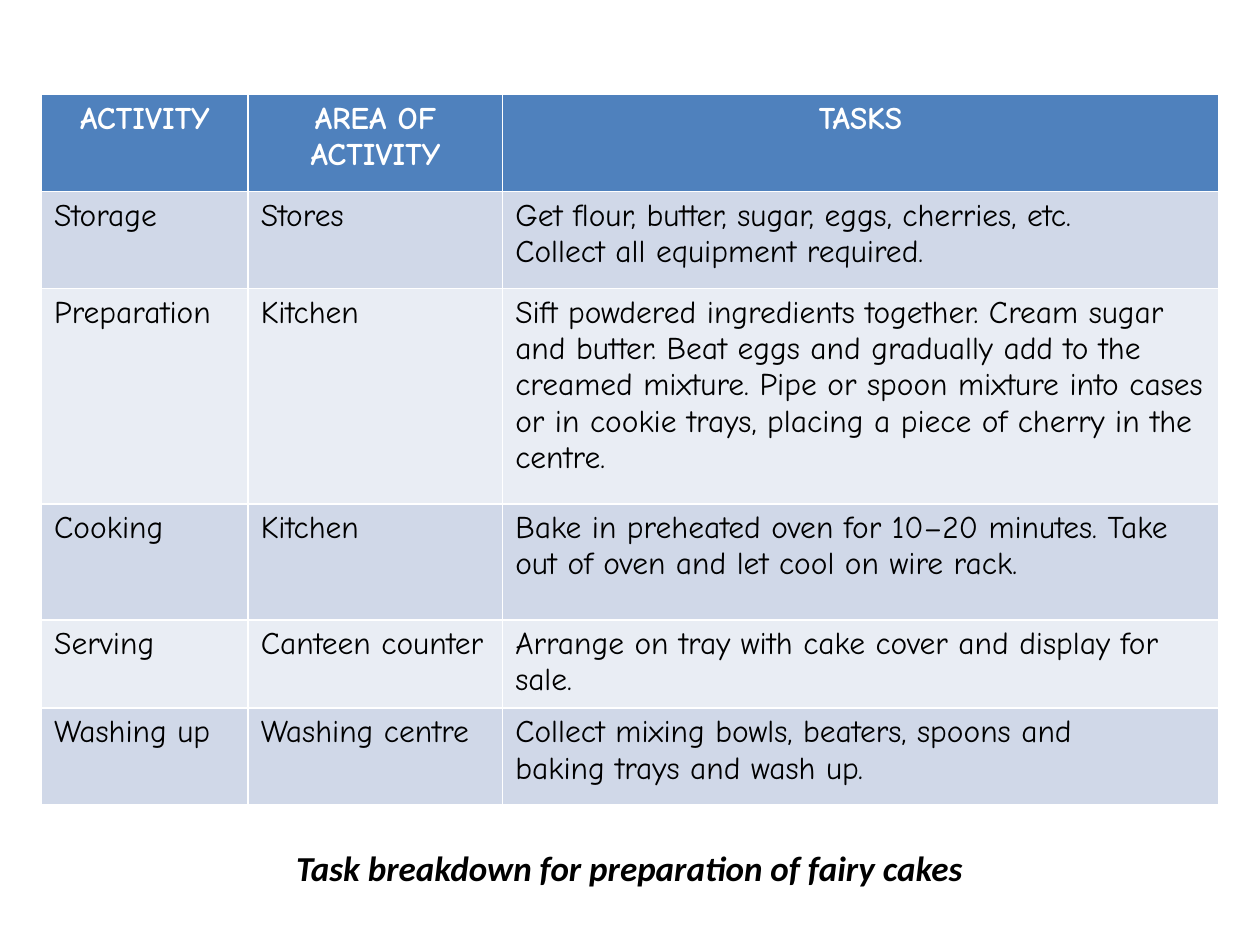
import pptx
import pptx.util
import pptx.dml.color
import pptx.enum.text

COLORS = {"head": "4F81BD", "odd": "D0D8E8", "even": "E9EDF4",
          "light": "FFFFFF", "dark": "000000"}
CAPTION = "Task breakdown for preparation of fairy cakes"
ROWS = [
    ("ACTIVITY", "AREA OF ACTIVITY", "TASKS"),
    ("Storage", "Stores",
     "Get flour, butter, sugar, eggs, cherries, etc.\nCollect all equipment required."),
    ("Preparation", "Kitchen",
     "Sift powdered ingredients together. Cream sugar and butter. "
     "Beat eggs and gradually add to the creamed mixture. "
     "Pipe or spoon mixture into cases or in cookie trays, "
     "placing a piece of cherry in the centre."),
    ("Cooking", "Kitchen",
     "Bake in preheated oven for 10–20 minutes. Take out of oven and let cool on wire rack."),
    ("Serving", "Canteen counter",
     "Arrange on tray with cake cover and display for sale."),
    ("Washing up", "Washing centre",
     "Collect mixing bowls, beaters, spoons and\nbaking trays and wash up."),
]
WIDTHS = [1.64, 2.02, 5.68]
HEIGHTS = [0.77, 0.77, 1.71, 0.92, 0.57, 0.77]

Inches = pptx.util.Inches
ALIGN = pptx.enum.text.PP_ALIGN


def color(name):
    return pptx.dml.color.RGBColor.from_string(COLORS[name])


def style(frame, face, size, tint, bold, align, italic=False):
    for para in frame.paragraphs:
        para.alignment = align
        for run in para.runs:
            font = run.font
            font.name, font.size = face, pptx.util.Pt(size)
            font.bold, font.italic = bold, italic
            font.color.rgb = color(tint)


def add_tasks(slide):
    left = (10 - sum(WIDTHS)) / 2
    frame = slide.shapes.add_table(
        len(ROWS), len(WIDTHS), Inches(left), Inches(0.75),
        Inches(sum(WIDTHS)), Inches(sum(HEIGHTS)))
    table = frame.table
    for col, width in zip(table.columns, WIDTHS):
        col.width = Inches(width)
    for i, (row, height, texts) in enumerate(zip(table.rows, HEIGHTS, ROWS)):
        row.height = Inches(height)
        head = i == 0
        fill = "head" if head else "odd" if i % 2 else "even"
        for cell, text in zip(row.cells, texts):
            cell.fill.solid()
            cell.fill.fore_color.rgb = color(fill)
            cell.text_frame.text = text
            style(cell.text_frame, "Comic Neue", 18, "light" if head else "dark",
                  head, ALIGN.CENTER if head else ALIGN.LEFT)


def add_caption(slide):
    title = slide.shapes.title
    title.left, title.top = Inches(2.25), Inches(6.67)
    title.width, title.height = Inches(5.78), Inches(0.44)
    frame = title.text_frame
    frame.text = CAPTION
    frame.word_wrap = True
    frame.auto_size = pptx.enum.text.MSO_AUTO_SIZE.SHAPE_TO_FIT_TEXT
    frame.vertical_anchor = pptx.enum.text.MSO_ANCHOR.TOP
    style(frame, "Calibri", 20, "dark", True, ALIGN.LEFT, italic=True)


def main():
    deck = pptx.Presentation()
    deck.slide_width, deck.slide_height = Inches(10), Inches(7.5)
    slide = deck.slides.add_slide(deck.slide_layouts.get_by_name("Title Only"))
    add_tasks(slide)
    add_caption(slide)
    deck.save("out.pptx")


if __name__ == "__main__":
    main()
